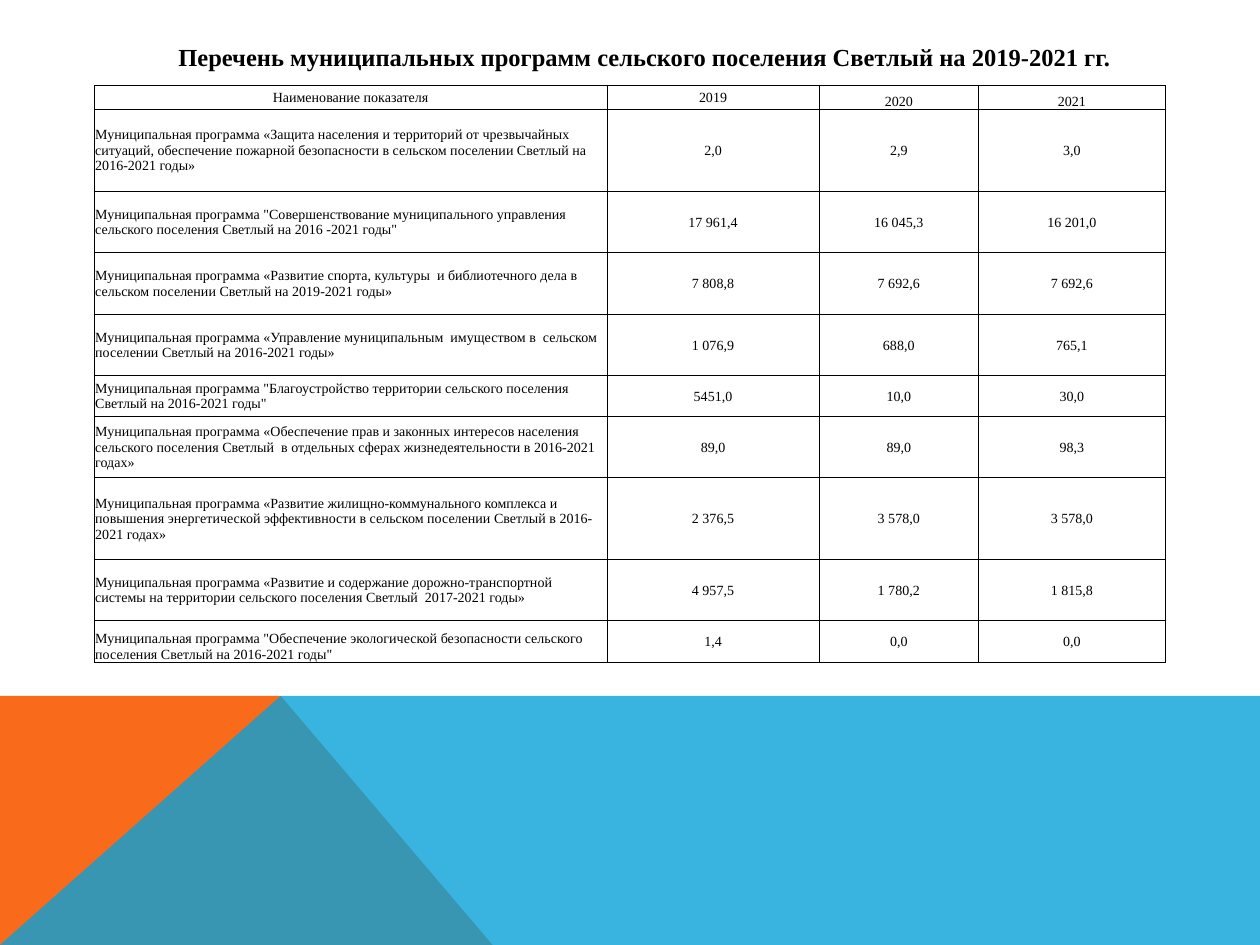
from lxml.etree import SubElement as Sub
from pptx import Presentation as Deck
from pptx.dml.color import RGBColor as Rgb
from pptx.enum.text import MSO_ANCHOR as Anchor, PP_ALIGN as Align
from pptx.oxml.ns import qn
from pptx.util import Cm, Pt

HUES = {"ink": "000000", "page": "FFFFFF", "warm": "F96A1B", "cool": "08A1D9"}
WIDE, HIGH = 25.4, 19.05

TITLE = "Перечень муниципальных программ сельского поселения Светлый на 2019-2021 гг."
COLS = [10.34, 4.27, 3.22, 3.76]
ROWS = [0.48, 1.65, 1.24, 1.24, 1.24, 0.82, 1.24, 1.64, 1.24, 0.84]
HEAD = ["Наименование показателя", "2019", "2020", "2021"]
PLANS = [
    ("«Защита населения и территорий от чрезвычайных ситуаций, обеспечение пожарной "
     "безопасности в сельском поселении Светлый на 2016-2021 годы»", "2,0", "2,9", "3,0"),
    ('"Совершенствование муниципального управления сельского поселения Светлый '
     'на 2016 -2021 годы"', "17 961,4", "16 045,3", "16 201,0"),
    ("«Развитие спорта, культуры  и библиотечного дела в сельском поселении Светлый "
     "на 2019-2021 годы»", "7 808,8", "7 692,6", "7 692,6"),
    ("«Управление муниципальным  имуществом в  сельском поселении Светлый "
     "на 2016-2021 годы»", "1 076,9", "688,0", "765,1"),
    ('"Благоустройство территории сельского поселения Светлый на 2016-2021 годы"',
     "5451,0", "10,0", "30,0"),
    ("«Обеспечение прав и законных интересов населения  сельского поселения Светлый  "
     "в отдельных сферах жизнедеятельности в 2016-2021 годах»", "89,0", "89,0", "98,3"),
    ("«Развитие жилищно-коммунального комплекса и повышения энергетической эффективности "
     "в сельском поселении Светлый в 2016-2021 годах»", "2 376,5", "3 578,0", "3 578,0"),
    ("«Развитие и содержание дорожно-транспортной системы на территории сельского "
     "поселения Светлый  2017-2021 годы»", "4 957,5", "1 780,2", "1 815,8"),
    ('"Обеспечение экологической безопасности сельского поселения Светлый '
     'на 2016-2021 годы"', "1,4", "0,0", "0,0"),
]


class Page:
    font = "Times New Roman"

    def __init__(self, deck):
        self.slide = deck.slides.add_slide(deck.slide_layouts[6])
        self.shapes = self.slide.shapes
        self.paint(self.slide.background.fill, "page")

    def paint(self, fill, hue):
        fill.solid()
        fill.fore_color.rgb = Rgb.from_string(HUES[hue])

    def label(self, frame, text, size, align, bold=False):
        para = frame.paragraphs[0]
        para.alignment = align
        run = para.add_run()
        run.text = text
        run.font.name, run.font.size, run.font.bold = self.font, Pt(size), bold
        run.font.color.rgb = Rgb.from_string(HUES["ink"])

    def patch(self, points, hue, alpha=None):
        first, *rest = [(Cm(x), Cm(y)) for x, y in points]
        pen = self.shapes.build_freeform(*first)
        pen.add_line_segments(rest, close=True)
        shape = pen.convert_to_shape()
        shape.shadow.inherit = False
        shape.line.fill.background()
        self.paint(shape.fill, hue)
        if alpha:
            color = shape.element.find(".//" + qn("a:srgbClr"))
            Sub(color, qn("a:alpha"), val=str(alpha * 1000))

    def title(self, text, box):
        frame = self.shapes.add_textbox(*map(Cm, box)).text_frame
        frame.word_wrap = True
        self.label(frame, text, 14, Align.CENTER, True)

    def edge(self, cell, left):
        props = cell._tc.get_or_add_tcPr()
        for side in "LRTB":
            wide = left if side == "L" else 0.5
            line = Sub(props, qn("a:ln" + side), w=str(Pt(wide)))
            fill = Sub(line, qn("a:solidFill"))
            Sub(fill, qn("a:srgbClr"), val=HUES["ink"])

    def cell(self, cell, text, align, anchor, left):
        self.edge(cell, left)
        cell.fill.background()
        cell.margin_left = cell.margin_right = cell.margin_top = Cm(0.02)
        cell.margin_bottom = 0
        cell.vertical_anchor = anchor
        self.label(cell.text_frame, text, 8, align)

    def table(self, data, x, y):
        box = map(Cm, (x, y, sum(COLS), sum(ROWS)))
        grid = self.shapes.add_table(len(ROWS), len(COLS), *box).table
        grid.first_row = grid.horz_banding = False
        for col, wide in zip(grid.columns, COLS):
            col.width = Cm(wide)
        for row, high in zip(grid.rows, ROWS):
            row.height = Cm(high)
        last = len(data) - 1
        for r, row in enumerate(data):
            for c, text in enumerate(row):
                name = c == 0 and r > 0
                low = (r == 0 and c > 1) or (r == last and c == 0)
                self.cell(grid.cell(r, c), text,
                          Align.LEFT if name else Align.CENTER,
                          Anchor.BOTTOM if low else Anchor.MIDDLE,
                          1 if name and r < last else 0.5)


def main():
    deck = Deck()
    deck.slide_width, deck.slide_height = Cm(WIDE), Cm(HIGH)
    page = Page(deck)

    # Coloured band at the foot
    top, peak = 14.03, 5.66
    page.patch([(0, HIGH), (0, top), (peak, top), (9.93, HIGH)], "warm")
    page.patch([(0, HIGH), (peak, top), (WIDE, top), (WIDE, HIGH)], "cool", 80)

    # Heading and list of programmes
    page.title(TITLE, (2.1, 0.73, 21.8, 0.86))
    rows = [("Муниципальная программа " + name, *sums) for name, *sums in PLANS]
    page.table([HEAD] + rows, 1.9, 1.72)

    deck.save("out.pptx")


if __name__ == "__main__":
    main()
